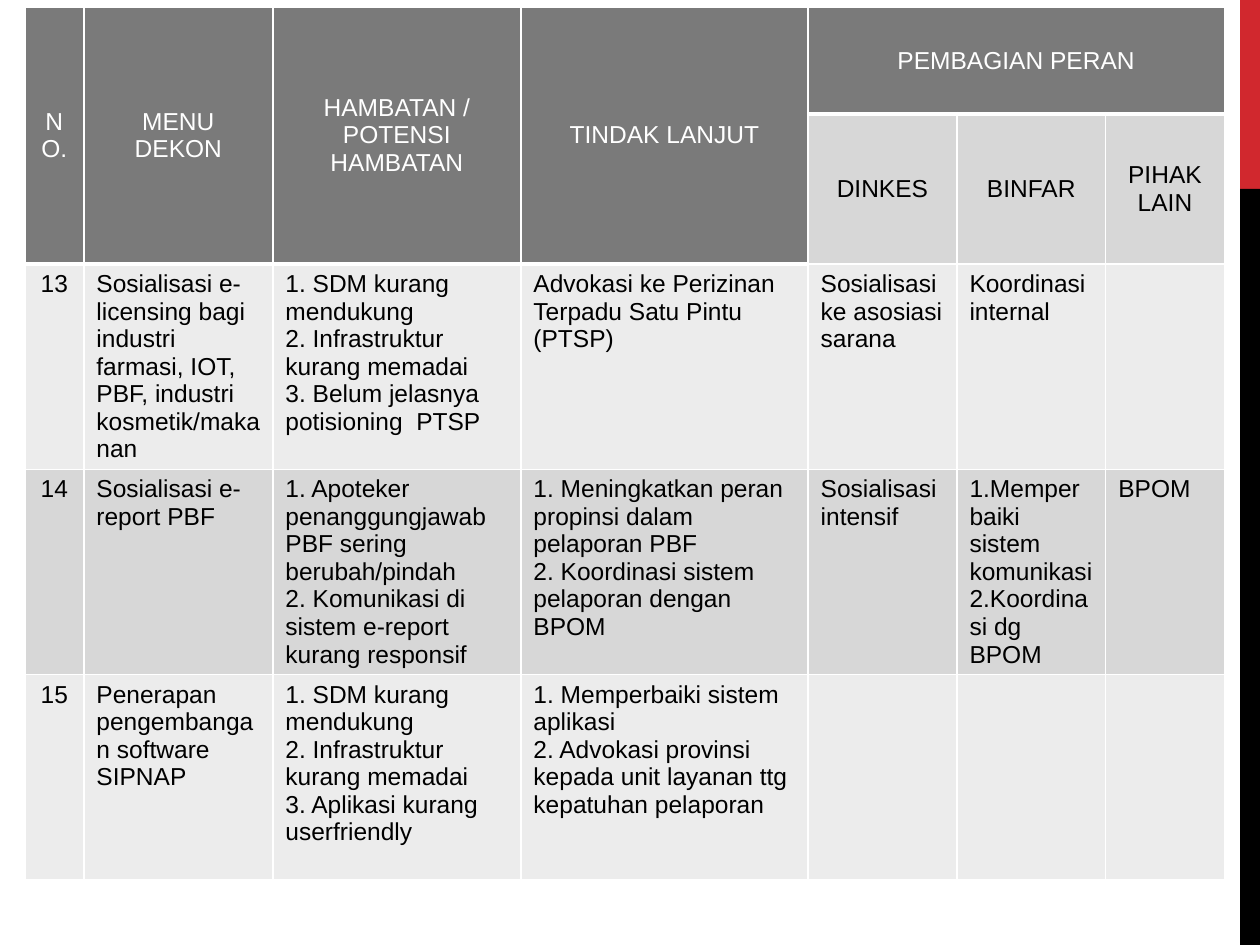
from lxml.etree import SubElement
from pptx import Presentation
from pptx.dml.color import RGBColor
from pptx.enum.shapes import MSO_SHAPE as Shape
from pptx.enum.text import MSO_ANCHOR as Anchor, PP_ALIGN as Align
from pptx.oxml.ns import qn
from pptx.util import Cm, Pt

COLORS = {
    "red": "D1282E",
    "black": "000000",
    "white": "FFFFFF",
    "header": "7A7A7A",
    "light": "ECECEC",
    "dark": "D7D7D7",
}
COLUMN_WIDTHS = [1.19, 3.81, 5, 5.79, 3, 3, 2.39]
ROW_HEIGHTS = [2.16, 3.02, 4.14, 4.14, 4.14]
HEADERS = ["NO.", "MENU DEKON", "HAMBATAN / POTENSI HAMBATAN", "TINDAK LANJUT", "PEMBAGIAN PERAN"]
ROLES = ["DINKES", "BINFAR", "PIHAK LAIN"]
ROLE_COLUMN = 4
# Each cell is a list of paragraphs.
ENTRIES = [
    [
        ["13"],
        ["Sosialisasi e-licensing bagi industri farmasi, IOT, PBF, industri kosmetik/makanan"],
        ["1. SDM kurang mendukung", "2. Infrastruktur kurang memadai",
         "3. Belum jelasnya potisioning  PTSP"],
        ["Advokasi ke Perizinan Terpadu Satu Pintu (PTSP)"],
        ["Sosialisasi ke asosiasi sarana"],
        ["Koordinasi internal"],
        [],
    ],
    [
        ["14"],
        ["Sosialisasi e-report PBF"],
        ["1. Apoteker penanggungjawab PBF sering berubah/pindah",
         "2. Komunikasi di sistem e-report kurang responsif"],
        ["1. Meningkatkan peran propinsi dalam pelaporan PBF",
         "2. Koordinasi sistem pelaporan dengan BPOM"],
        ["Sosialisasi intensif"],
        ["1.Memperbaiki sistem komunikasi", "2.Koordinasi dg BPOM"],
        ["BPOM"],
    ],
    [
        ["15"],
        ["Penerapan pengembangan software SIPNAP"],
        ["1. SDM kurang mendukung", "2. Infrastruktur kurang memadai",
         "3. Aplikasi kurang userfriendly"],
        ["1. Memperbaiki sistem aplikasi",
         "2. Advokasi provinsi kepada unit layanan ttg kepatuhan pelaporan"],
        [],
        [],
        [],
    ],
]


def color(name):
    return RGBColor.from_string(COLORS[name])


def add_side_bar(page, top, height, fill):
    bar = page.shapes.add_shape(Shape.RECTANGLE, Cm(25), Cm(top), Cm(0.4), Cm(height))
    bar.fill.solid()
    bar.fill.fore_color.rgb = color(fill)
    bar.line.fill.background()
    bar.shadow.inherit = False


def set_borders(cell, bottom_width):
    properties = cell._tc.get_or_add_tcPr()
    for index, side in enumerate("LRTB"):
        width = bottom_width if side == "B" else 1
        line = SubElement(properties, qn(f"a:ln{side}"), w=str(Pt(width)))
        fill = SubElement(line, qn("a:solidFill"))
        SubElement(fill, qn("a:srgbClr"), val=COLORS["white"])
        properties.insert(index, line)


def fill_cell(cell, texts, fill, font_color="black", centered=False, anchor=Anchor.TOP, bottom_width=1):
    cell.fill.solid()
    cell.fill.fore_color.rgb = color(fill)
    cell.vertical_anchor = anchor
    set_borders(cell, bottom_width)
    frame = cell.text_frame
    for index, text in enumerate(texts):
        para = frame.add_paragraph() if index else frame.paragraphs[0]
        para.alignment = Align.CENTER if centered else Align.LEFT
        span = para.add_run()
        span.text = text
        span.font.name = "Arial"
        span.font.size = Pt(14)
        span.font.bold = False
        span.font.color.rgb = color(font_color)


def add_table(page):
    frame = page.shapes.add_table(
        len(ROW_HEIGHTS), len(COLUMN_WIDTHS), Cm(0.5), Cm(0.14),
        Cm(sum(COLUMN_WIDTHS)), Cm(sum(ROW_HEIGHTS)))
    table = frame.table
    table.first_row = table.horz_banding = False
    for column, width in zip(table.columns, COLUMN_WIDTHS):
        column.width = Cm(width)
    for row, height in zip(table.rows, ROW_HEIGHTS):
        row.height = Cm(height)
    return table


def fill_headers(table):
    for index, text in enumerate(HEADERS):
        cell = table.cell(0, index)
        last = table.cell(0, len(COLUMN_WIDTHS) - 1) if index == ROLE_COLUMN else table.cell(1, index)
        cell.merge(last)
        fill_cell(cell, [text], "header", "white", True, Anchor.MIDDLE, bottom_width=3)
    for index, text in enumerate(ROLES, ROLE_COLUMN):
        fill_cell(table.cell(1, index), [text], "dark", centered=True, anchor=Anchor.MIDDLE)


def fill_entries(table):
    for row, entry in enumerate(ENTRIES, 2):
        fill = "dark" if row % 2 else "light"
        for index, texts in enumerate(entry):
            fill_cell(table.cell(row, index), texts, fill, centered=index == 0)


def main():
    deck = Presentation()
    deck.slide_width, deck.slide_height = Cm(25.4), Cm(19.05)
    page = deck.slides.add_slide(deck.slide_layouts[6])
    add_side_bar(page, 0, 3.81, "red")
    add_side_bar(page, 3.81, 15.24, "black")
    table = add_table(page)
    fill_headers(table)
    fill_entries(table)
    deck.save("out.pptx")


if __name__ == "__main__":
    main()
